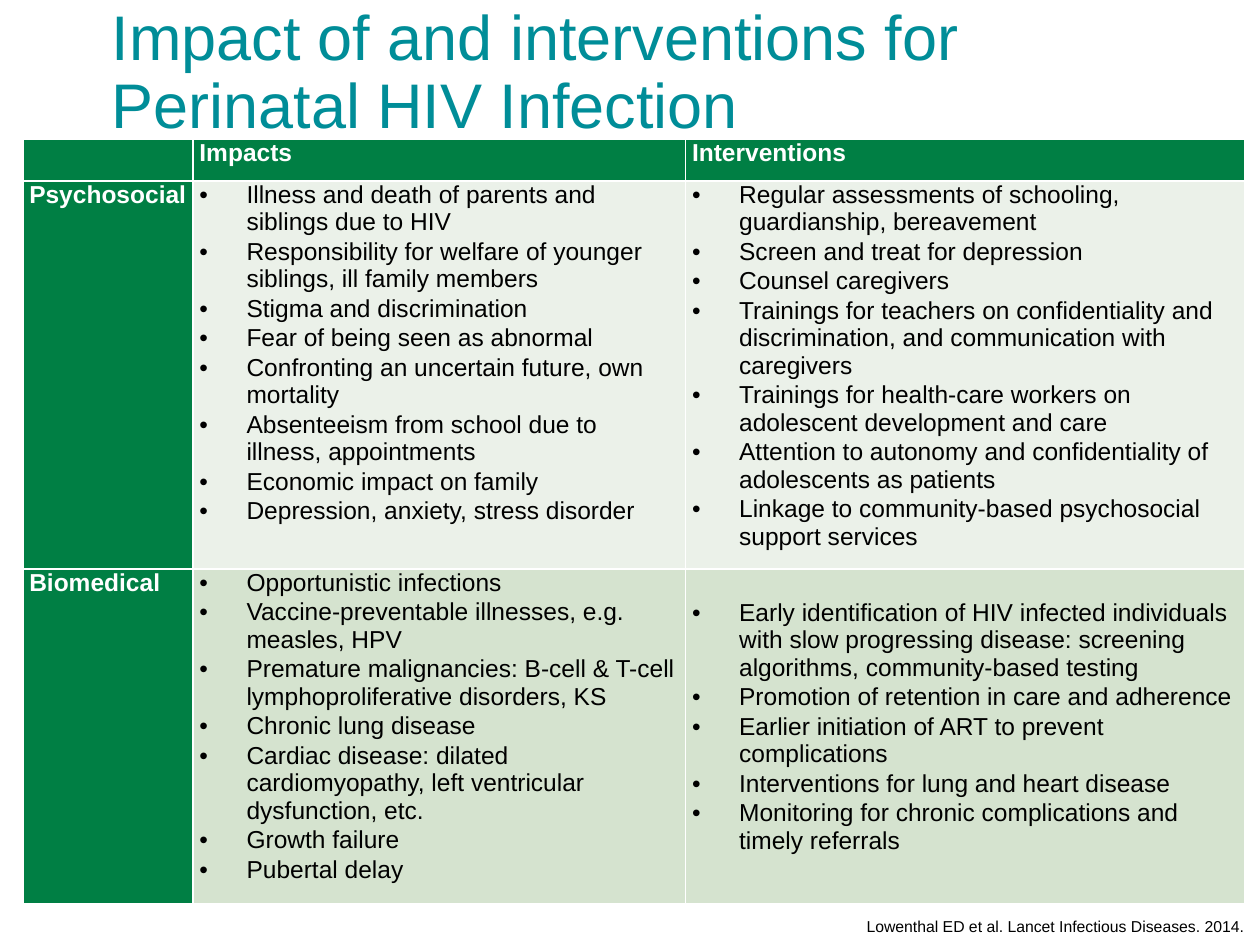
"""Builds a slide on the impact of and interventions for perinatal HIV infection."""
import lxml.etree
import pptx
import pptx.dml.color
import pptx.enum.text
import pptx.oxml.ns
import pptx.util

Cm = pptx.util.Cm
Pt = pptx.util.Pt
qn = pptx.oxml.ns.qn

COLORS = {
    "title": "008D98",
    "header": "007F44",
    "psychosocial": "EBF1E9",
    "biomedical": "D5E3CF",
    "white": "FFFFFF",
    "black": "000000",
}


def write(frame, lines, size=14, color="black", bold=False, bullet=False, spacing=None):
    for index, line in enumerate(lines):
        para = frame.paragraphs[0] if index == 0 else frame.add_paragraph()
        if bullet:
            properties = para._p.get_or_add_pPr()
            properties.set("marL", str(Cm(0.95)))
            properties.set("indent", str(-Cm(0.95)))
            lxml.etree.SubElement(properties, qn("a:buFont"), typeface="Arial")
            lxml.etree.SubElement(properties, qn("a:buChar"), char="•")
            para.space_after = Pt(1.1)
        if spacing:
            para.line_spacing = spacing
        para.font.size = Pt(size)
        span = para.add_run()
        span.text = line
        span.font.name = "Arial"
        span.font.size = Pt(size)
        span.font.bold = bold
        span.font.color.rgb = pptx.dml.color.RGBColor.from_string(COLORS[color])


def style_cell(cell, color):
    properties = cell._tc.get_or_add_tcPr()
    for side in ("a:lnL", "a:lnR", "a:lnT", "a:lnB"):
        border = lxml.etree.SubElement(properties, qn(side), w=str(Pt(1)))
        fill = lxml.etree.SubElement(border, qn("a:solidFill"))
        lxml.etree.SubElement(fill, qn("a:srgbClr"), val=COLORS["white"])
    cell.fill.solid()
    cell.fill.fore_color.rgb = pptx.dml.color.RGBColor.from_string(COLORS[color])
    cell.margin_left = cell.margin_right = Cm(0.13)
    cell.margin_top = cell.margin_bottom = 0


headings = ["", "Impacts", "Interventions"]
topics = [
    (
        "Psychosocial",
        [
            "Illness and death of parents and siblings due to HIV",
            "Responsibility for welfare of younger siblings, ill family members",
            "Stigma and discrimination",
            "Fear of being seen as abnormal",
            "Confronting an uncertain future, own mortality",
            "Absenteeism from school due to illness, appointments",
            "Economic impact on family",
            "Depression, anxiety, stress disorder",
        ],
        [
            "Regular assessments of schooling, guardianship, bereavement",
            "Screen and treat for depression",
            "Counsel caregivers",
            "Trainings for teachers on confidentiality and discrimination, "
            "and communication with caregivers",
            "Trainings for health-care workers on adolescent development and care",
            "Attention to autonomy and confidentiality of adolescents as patients",
            "Linkage to community-based psychosocial support services",
        ],
    ),
    (
        "Biomedical",
        [
            "Opportunistic infections",
            "Vaccine-preventable illnesses, e.g. measles, HPV",
            "Premature malignancies: B-cell & T-cell lymphoproliferative disorders, KS",
            "Chronic lung disease",
            "Cardiac disease: dilated cardiomyopathy, left ventricular dysfunction, etc.",
            "Growth failure",
            "Pubertal delay",
        ],
        [
            "Early identification of HIV infected individuals with slow progressing "
            "disease: screening algorithms, community-based testing",
            "Promotion of retention in care and adherence",
            "Earlier initiation of ART to prevent complications",
            "Interventions for lung and heart disease",
            "Monitoring for chronic complications and timely referrals",
        ],
    ),
]

deck = pptx.Presentation()
deck.slide_width = Cm(25.4)
deck.slide_height = Cm(19.05)
page = deck.slides.add_slide(deck.slide_layouts[6])

widths = [3.43, 9.93, 11.28]
heights = [0.85, 7.82, 6.74]
table = page.shapes.add_table(
    3, 3, Cm(0.46), Cm(2.8), Cm(sum(widths)), Cm(sum(heights))
).table
for column, width in zip(table.columns, widths):
    column.width = Cm(width)
for row, height in zip(table.rows, heights):
    row.height = Cm(height)

for cell, heading in zip(table.rows[0].cells, headings):
    style_cell(cell, "header")
    write(cell.text_frame, [heading], color="white", bold=True)

for row_number, (topic, *lists) in enumerate(topics, start=1):
    label = table.cell(row_number, 0)
    style_cell(label, "header")
    write(label.text_frame, [topic], color="white", bold=True)
    for column_number, items in enumerate(lists, start=1):
        cell = table.cell(row_number, column_number)
        style_cell(cell, topic.lower())
        write(cell.text_frame, items, bullet=True)
table.cell(2, 2).margin_top = Cm(0.6)

title = page.shapes.add_textbox(Cm(2), Cm(0.43), Cm(21.9), Cm(2.13))
title.text_frame.word_wrap = True
title.text_frame.vertical_anchor = pptx.enum.text.MSO_ANCHOR.MIDDLE
write(
    title.text_frame,
    ["Impact of and interventions for Perinatal HIV Infection"],
    size=36,
    color="title",
    spacing=0.9,
)

citation = page.shapes.add_textbox(Cm(17.22), Cm(18.36), Cm(8.18), Cm(0.64))
citation.text_frame.word_wrap = False
write(
    citation.text_frame,
    ["Lowenthal ED et al. Lancet Infectious Diseases. 2014."],
    size=9,
)

deck.save("out.pptx")
